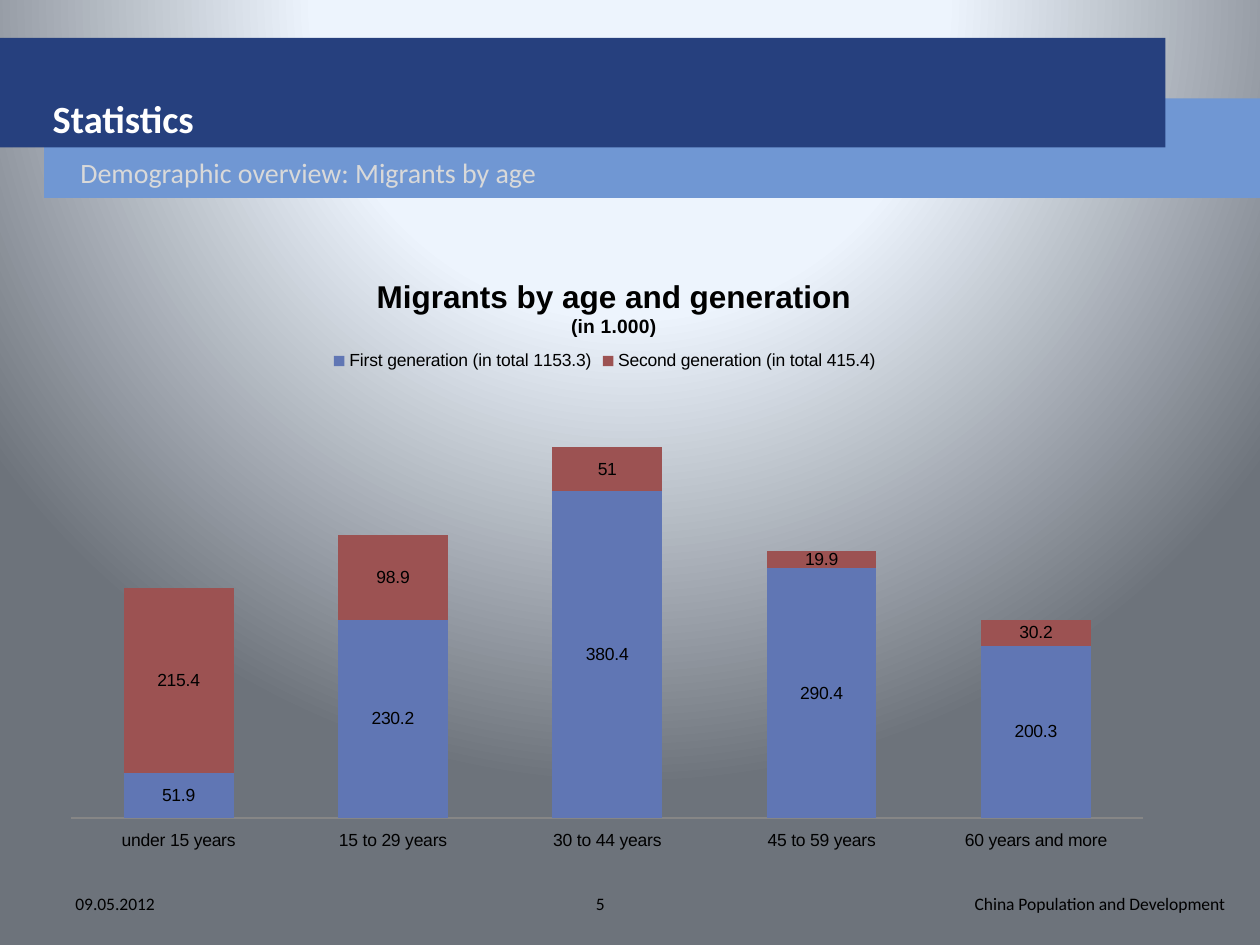
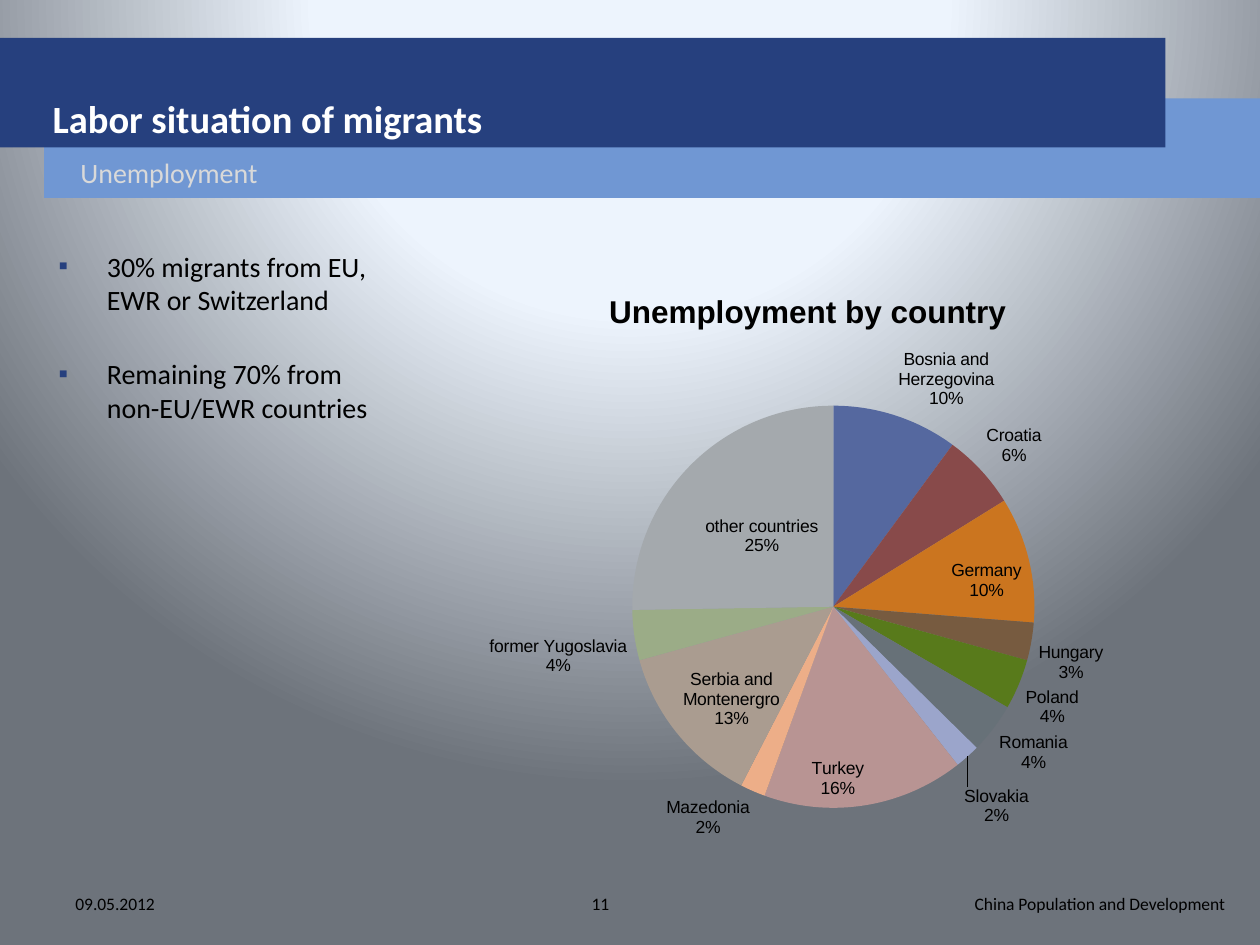
from lxml import etree
from pptx import Presentation
from pptx.chart.data import CategoryChartData
from pptx.dml.color import RGBColor
from pptx.enum.chart import XL_CHART_TYPE as ChartType
from pptx.enum.chart import XL_LABEL_POSITION as LabelPos
from pptx.enum.chart import XL_LEGEND_POSITION as LegendPos
from pptx.enum.chart import XL_TICK_LABEL_POSITION as TickLabels
from pptx.enum.chart import XL_TICK_MARK as TickMark
from pptx.enum.shapes import MSO_SHAPE as Shape
from pptx.enum.text import MSO_ANCHOR as Anchor
from pptx.enum.text import PP_ALIGN as Align
from pptx.oxml import parse_xml
from pptx.oxml.ns import qn
from pptx.util import Inches, Pt

NAVY, SKY = "26407E", "7097D3"
WHITE, BLACK, PALE, AXIS_GREY = "FFFFFF", "000000", "D9D9D9", "868686"
GENERATION_COLORS = ["6076B4", "9C5252"]
COUNTRY_COLORS = ["55689F", "884A4A", "CB751F", "775B40", "587A1B", "677178",
                  "9BA5CB", "B89493", "EDAE88", "AA9C90", "9BAC87", "A4A9AD"]
DATE, EVENT = "09.05.2012", "China Population and Development"
A_NS = "http://schemas.openxmlformats.org/drawingml/2006/main"


def color(hex_code):
    return RGBColor.from_string(hex_code)


def paint(target, hex_code):
    target.format.fill.solid()
    target.format.fill.fore_color.rgb = color(hex_code)


def style(font, size, hex_code=BLACK, bold=False, name="Calibri"):
    font.name, font.size, font.bold = name, Pt(size), bold
    font.color.rgb = color(hex_code)


def set_background(master):
    """Give all slides a round gradient centred above the top edge."""
    master.background.fill.gradient()
    gradient = master.element.xpath(".//p:bg//a:gradFill")[0]
    stops = "".join(
        f'<a:gs pos="{percent * 1000}"><a:srgbClr val="{hex_code}"/></a:gs>'
        for percent, hex_code in [(0, "F0F6FE"), (40, "EDF4FD"), (100, "6D737B")])
    gradient.getparent().replace(gradient, parse_xml(
        f'<a:gradFill xmlns:a="{A_NS}" rotWithShape="1"><a:gsLst>{stops}</a:gsLst>'
        '<a:path path="circle"><a:fillToRect l="50000" t="-80000" r="50000" '
        'b="180000"/></a:path></a:gradFill>'))


def add_band(slide, left, top, width, height, hex_code):
    band = slide.shapes.add_shape(Shape.RECTANGLE, Inches(left), Inches(top),
                                  Inches(width), Inches(height))
    band.shadow.inherit = False
    band.fill.solid()
    band.fill.fore_color.rgb = color(hex_code)
    band.line.fill.background()


def add_text(slide, box, lines, size, hex_code=BLACK, bold=False,
             anchor=Anchor.MIDDLE, align=Align.LEFT, margin=0):
    """Add a text box with one paragraph per line and return its paragraphs."""
    frame = slide.shapes.add_textbox(*map(Inches, box)).text_frame
    frame.word_wrap = True
    frame.vertical_anchor = anchor
    for number, line in enumerate(lines):
        paragraph = frame.add_paragraph() if number else frame.paragraphs[0]
        paragraph.text = line
        paragraph.alignment = align
        style(paragraph.font, size, hex_code, bold)
        paragraph._p.get_or_add_pPr().set("marL", str(Inches(margin)))
    return frame.paragraphs


def add_bullets(slide, box, items):
    paragraphs = add_text(slide, box, items, 16, anchor=Anchor.TOP, margin=0.38)
    for number, paragraph in enumerate(paragraphs):
        paragraph.space_before = Pt(23 if number else 3)
        properties = paragraph._p.get_or_add_pPr()
        properties.set("indent", str(-Inches(0.38)))
        bullet = [
            f'<a:buClr xmlns:a="{A_NS}"><a:srgbClr val="{NAVY}"/></a:buClr>',
            f'<a:buSzPct xmlns:a="{A_NS}" val="50000"/>',
            f'<a:buFont xmlns:a="{A_NS}" typeface="Arial"/>',
            f'<a:buChar xmlns:a="{A_NS}" char="■"/>']
        defaults = properties.find(qn("a:defRPr"))
        for part in bullet:
            defaults.addprevious(parse_xml(part))


def add_frame(prs, title, subtitle, page):
    """Start a slide with the bands, headings and footer that all slides share."""
    slide = prs.slides.add_slide(prs.slide_layouts[6])
    add_band(slide, 0.35, 0.78, 9.65, 0.79, SKY)
    add_band(slide, 0, 0.3, 9.25, 0.87, NAVY)
    add_text(slide, (0.13, 0.3, 8.81, 0.87), [title], 22, WHITE, bold=True,
             anchor=Anchor.BOTTOM, margin=0.19)
    add_text(slide, (0.35, 1.17, 8.98, 0.39), [subtitle], 16, PALE, margin=0.19)
    for left, text, align in [(0.5, DATE, Align.LEFT),
                              (3.6, str(page), Align.CENTER),
                              (7.49, EVENT, Align.RIGHT)]:
        add_text(slide, (left, 6.97, 2.33, 0.4), [text], 10, align=align)
    return slide


def place(part, index, target=None, **fractions):
    """Set a manual layout, in fractions of the chart, as child number index."""
    for old in part.findall(qn("c:layout")):
        part.remove(old)
    layout = etree.Element(qn("c:layout"))
    manual = etree.SubElement(layout, qn("c:manualLayout"))
    if target:
        etree.SubElement(manual, qn("c:layoutTarget"), val=target)
    if target or part.tag != qn("c:dLbl"):
        for axis in "xy":
            etree.SubElement(manual, qn(f"c:{axis}Mode"), val="edge")
    for key, value in fractions.items():
        etree.SubElement(manual, qn(f"c:{key}"), val=str(value))
    part.insert(index, layout)


def add_chart(slide, kind, box, categories, series, title_lines, title_at, plot_box):
    """Add a chart; title_lines holds (text, size) pairs."""
    data = CategoryChartData()
    data.categories = categories
    for name, values in series.items():
        data.add_series(name, values)
    chart = slide.shapes.add_chart(kind, *map(Inches, box), data).chart
    style(chart.font, 10, name="Arial")
    chart.has_legend = False
    frame = chart.chart_title.text_frame
    for number, (text, size) in enumerate(title_lines):
        paragraph = frame.add_paragraph() if number else frame.paragraphs[0]
        paragraph.text = text
        style(paragraph.font, size, bold=True, name="Arial")
    place(chart.element.xpath(".//c:title")[0], 1, x=title_at[0], y=title_at[1])
    place(chart.element.xpath(".//c:plotArea")[0], 0, "inner",
          **dict(zip("xywh", plot_box)))
    return chart


def add_generation_chart(slide):
    chart = add_chart(
        slide, ChartType.COLUMN_STACKED, (0.39, 1.98, 8.86, 4.8),
        ["under 15 years", "15 to 29 years", "30 to 44 years", "45 to 59 years",
         "60 years and more"],
        {"First generation (in total 1153.3)": [51.9, 230.2, 380.4, 290.4, 200.3],
         "Second generation (in total 415.4)": [215.4, 98.9, 51, 19.9, 30.2]},
        [("Migrants by age and generation", 18), ("(in 1.000)", 11)],
        (0.29, 0.04), (0.02, 0.23, 0.96, 0.71))
    plot = chart.plots[0]
    plot.gap_width, plot.overlap, plot.vary_by_categories = 95, 100, False
    for generation, hex_code in zip(plot.series, GENERATION_COLORS):
        paint(generation, hex_code)
        generation.data_labels.show_value = True
        generation.data_labels.position = LabelPos.CENTER
    chart.has_legend = True
    chart.legend.position = LegendPos.TOP
    chart.legend.include_in_layout = False
    place(chart.element.xpath(".//c:legend")[0], 1, x=0.25, y=0.16)
    ages, counts = chart.category_axis, chart.value_axis
    ages.major_tick_mark = TickMark.NONE
    ages.tick_label_position = TickLabels.LOW
    ages.format.line.color.rgb = color(AXIS_GREY)
    counts.minimum_scale, counts.maximum_scale = 0, 500
    counts.has_major_gridlines = False
    counts.visible = False


def add_country_chart(slide):
    shares = {"Bosnia and Herzegovina": 10, "Croatia": 6, "Germany": 10,
              "Hungary": 3, "Poland": 4, "Romania": 4, "Slovakia": 2,
              "Turkey": 16, "Mazedonia": 2, "Serbia and Montenergro": 13,
              "former Yugoslavia": 4, "other countries": 25}
    inner_labels = {"Germany": LabelPos.INSIDE_END, "Turkey": LabelPos.INSIDE_END,
                    "Serbia and Montenergro": LabelPos.INSIDE_END,
                    "other countries": LabelPos.CENTER}
    title = "Unemployment by country"
    chart = add_chart(slide, ChartType.PIE, (3.11, 2.02, 6.46, 4.8), list(shares),
                      {title: list(shares.values())}, [(title, 18)],
                      (0.26, 0.05), (0.295, 0.25, 0.495, 0.665))
    plot = chart.plots[0]
    plot.vary_by_categories = True
    countries = plot.series[0]
    labels = countries.data_labels
    labels.show_value = False
    labels.show_category_name = labels.show_percentage = True
    labels.position = LabelPos.OUTSIDE_END
    for number, (country, hex_code) in enumerate(zip(shares, COUNTRY_COLORS)):
        point = countries.points[number]
        paint(point, hex_code)
        point.data_label.position = inner_labels.get(country, LabelPos.OUTSIDE_END)
    for label, country in zip(chart.element.xpath(".//c:dLbl"), shares):
        for flag, shown in [("showVal", 0), ("showCatName", 1), ("showPercent", 1)]:
            label.find(qn(f"c:{flag}")).set("val", str(shown))
        if country == "Slovakia":
            place(label, 1, x=-0.01, y=0.04)
    for flag in chart.element.xpath(".//c:ser//c:showBubbleSize"):
        separator = etree.Element(qn("c:separator"))
        separator.text = "\n"
        flag.addnext(separator)


def main():
    prs = Presentation()
    prs.slide_width, prs.slide_height = Inches(10), Inches(7.5)
    set_background(prs.slide_master)

    statistics = add_frame(prs, "Statistics",
                           "Demographic overview: Migrants by age", 5)
    add_generation_chart(statistics)

    labor = add_frame(prs, "Labor situation of migrants", "Unemployment", 11)
    add_bullets(labor, (0.37, 1.93, 9.25, 4.8),
                ["30% migrants from EU,\nEWR or Switzerland",
                 "Remaining 70% from\nnon-EU/EWR countries"])
    add_country_chart(labor)
    prs.save("out.pptx")


if __name__ == "__main__":
    main()
